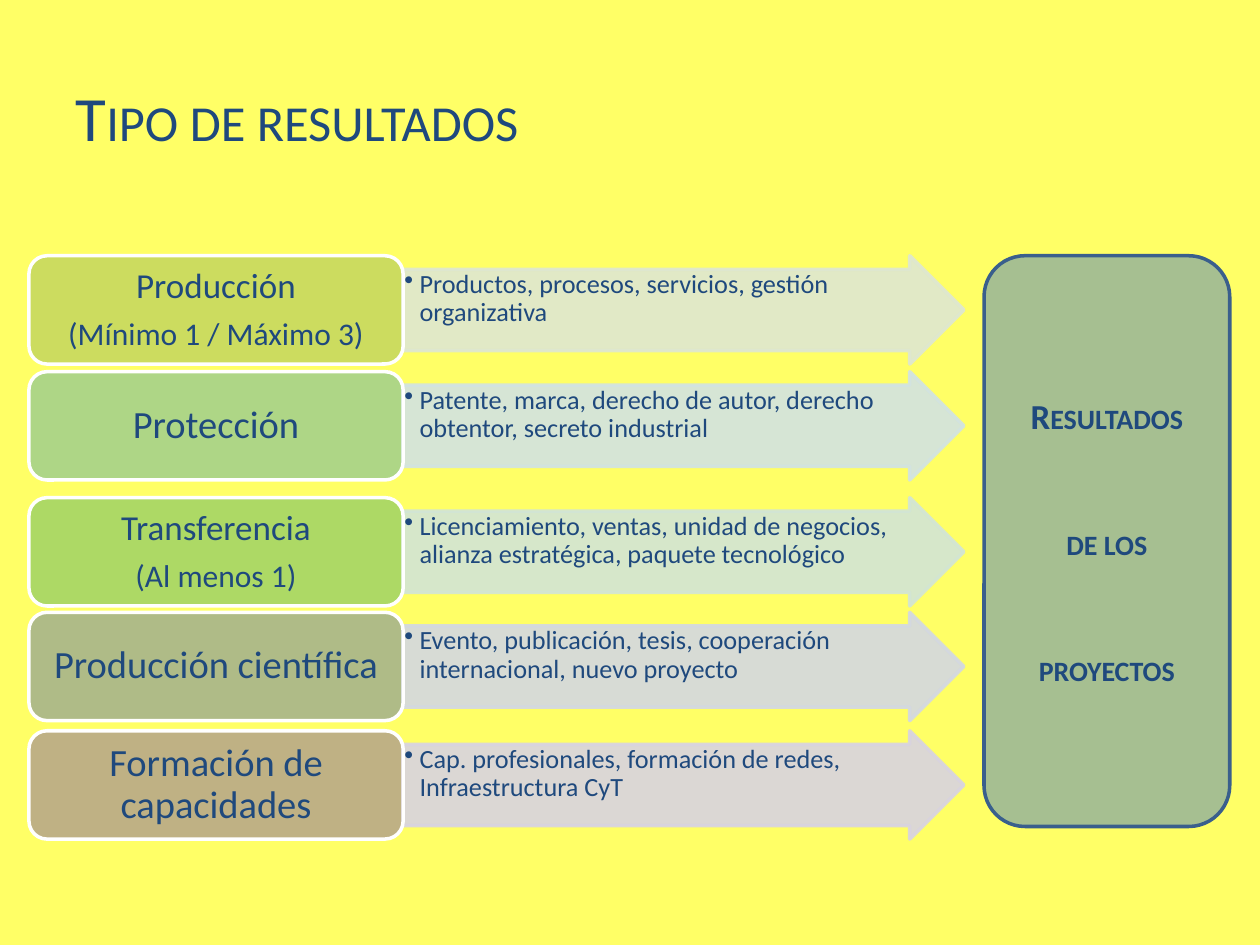
import pptx
import pptx.util
import pptx.dml.color
import pptx.enum.shapes
import pptx.enum.text
import pptx.oxml
import pptx.oxml.ns
import lxml.etree

Inches, Pt = pptx.util.Inches, pptx.util.Pt
Kind = pptx.enum.shapes.MSO_SHAPE
Align = pptx.enum.text.PP_ALIGN
Middle = pptx.enum.text.MSO_ANCHOR.MIDDLE
qn = pptx.oxml.ns.qn
INK = "1F497D"


def tint(form, color, alpha=100):
    """Set a fill or font colour; alpha is the opacity in percent."""
    if hasattr(form, "solid"):
        form.solid()
        form = form.fore_color
    else:
        form = form.color
    form.rgb = pptx.dml.color.RGBColor.from_string(color)
    return alpha


def draw(kind, box, fill, opaque, edge, edge_opaque=100):
    shape = slide.shapes.add_shape(kind, *[Inches(n) for n in box])
    shape.shadow.inherit = False
    tint(shape.fill, fill)
    tint(shape.line.fill, edge)
    shape.line.width = Pt(2)
    # The first colour in the shape is its fill, the second its line.
    colors = shape._element.spPr.iter(qn("a:srgbClr"))
    for node, share in zip(list(colors), (opaque, edge_opaque)):
        if share < 100:
            lxml.etree.SubElement(node, qn("a:alpha"), val=str(share * 1000))
    shape.text_frame.word_wrap = True
    return shape


deck = pptx.Presentation()
deck.slide_width, deck.slide_height = Inches(10), Inches(7.5)
slide = deck.slides.add_slide(deck.slide_layouts[5])
tint(slide.background.fill, "FFFF66")

title = slide.shapes.title
title.left, title.top = Inches(0.5), Inches(0.3)
title.width, title.height = Inches(7.81), Inches(1.25)
title.text_frame.text = "Tipo de resultados"
title.text_frame.vertical_anchor = Middle
para = title.text_frame.paragraphs[0]
para.alignment = Align.LEFT
font = para.runs[0].font
font.name, font.size = "Calibri", Pt(36)
tint(font, INK)
para.runs[0]._r.get_or_add_rPr().set("cap", "small")

# Columns: label, arrow, result panel
left, mid, right = 0.23, 3.2, 7.81
wide, long, high = mid - left, 4.45, 0.86
rows = [
    (2.03, "9BBB59", "DEE7D1", ["Producción", "(Mínimo 1 / Máximo 3)"],
     "Productos, procesos, servicios, gestión organizativa"),
    (2.95, "5EAFA6", "D2E3E2", ["Protección"],
     "Patente, marca, derecho de autor, derecho obtentor, secreto industrial"),
    (3.95, "5CB565", "D2E5D5", ["Transferencia", "(Al menos 1)"],
     "Licenciamiento, ventas, unidad de negocios, alianza estratégica, "
     "paquete tecnológico"),
    (4.86, "6179A8", "D3D8E2", ["Producción científica"],
     "Evento, publicación, tesis, cooperación internacional, nuevo proyecto"),
    (5.8, "8064A2", "D8D3E0", ["Formación de capacidades"],
     "Cap. profesionales, formación de redes, Infraestructura CyT"),
]
for top, dark, pale, label, detail in rows:
    arrow = draw(Kind.RIGHT_ARROW, (mid, top, long, high), pale, 90, pale, 90)
    arrow.adjustments[0], arrow.adjustments[1] = 0.75, 0.5
    frame = arrow.text_frame
    frame.vertical_anchor = pptx.enum.text.MSO_ANCHOR.TOP
    frame.margin_left = frame.margin_right = Inches(0.01)
    frame.margin_top = frame.margin_bottom = Inches(0.01)
    frame.text = detail
    para = frame.paragraphs[0]
    para.alignment, para.line_spacing = Align.LEFT, 0.9
    props = para._p.get_or_add_pPr()
    props.set("marL", str(Inches(0.12)))
    props.set("indent", str(-Inches(0.12)))
    lxml.etree.SubElement(props, qn("a:buChar"), char="•")
    font = para.runs[0].font
    font.name, font.size = "Calibri", Pt(15)
    tint(font, INK)

    card = draw(Kind.ROUNDED_RECTANGLE, (left, top, wide, high),
                dark, 50, "FFFFFF")
    frame = card.text_frame
    frame.vertical_anchor = Middle
    frame.margin_left = frame.margin_right = Inches(0.08)
    frame.margin_top = frame.margin_bottom = Inches(0.04)
    frame.text = "\n".join(label)
    sizes = (20, 18) if len(label) > 1 else (22,)
    for para, size in zip(frame.paragraphs, sizes):
        para.alignment, para.line_spacing = Align.CENTER, 0.9
        para.space_after = Pt(7)
        font = para.runs[0].font
        font.name, font.size = "Calibri", Pt(size)
        tint(font, INK)

panel = draw(Kind.ROUNDED_RECTANGLE, (right, 2.03, 1.95, 4.53),
             "4F81BD", 50, "3A5F8C")
frame = panel.text_frame
frame.vertical_anchor = Middle
frame.text = "Resultados\nde los\nproyectos"
for step, para in enumerate(frame.paragraphs):
    para.alignment = Align.CENTER
    if step:
        para.space_before = Pt(48)
    run = para.runs[0]
    run.font.name, run.font.size, run.font.bold = "Calibri", Pt(20), True
    tint(run.font, INK)
    run._r.get_or_add_rPr().set("cap", "small")

deck.save("out.pptx")
